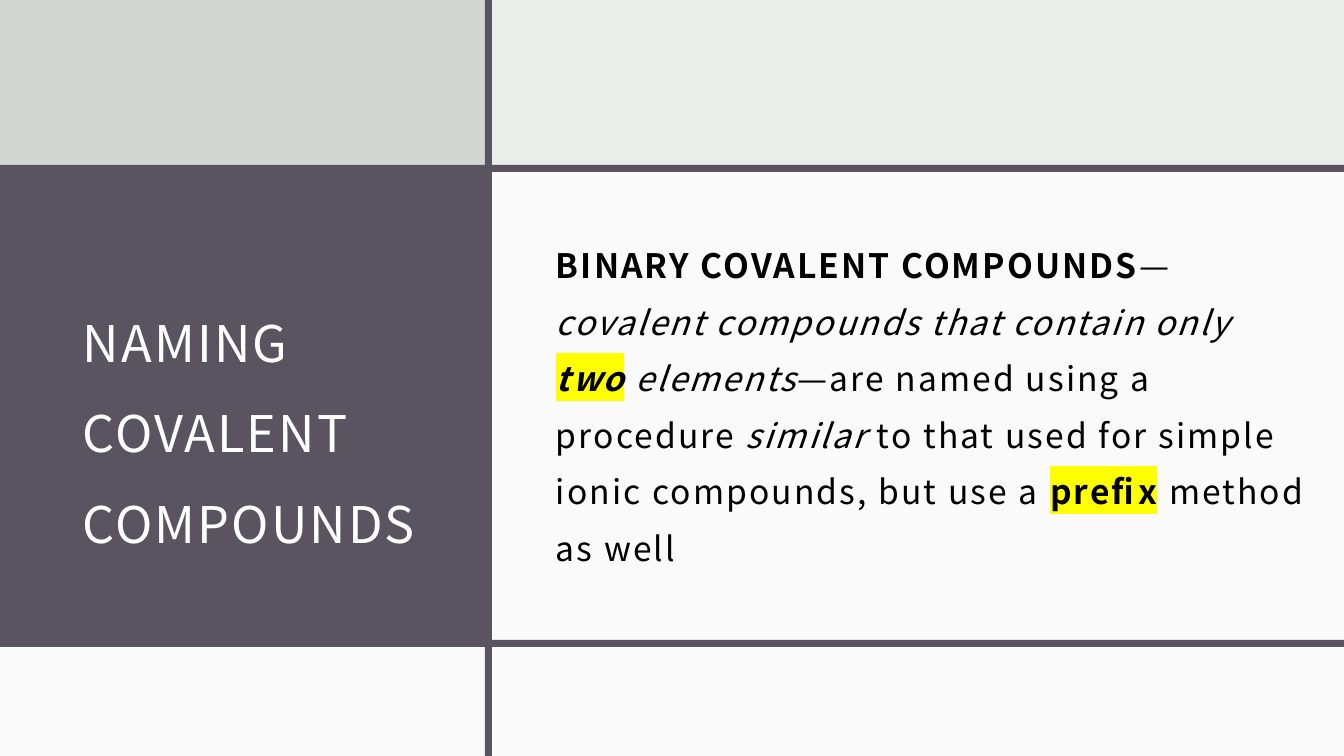
from lxml import etree
from pptx import Presentation
from pptx import util as u
from pptx.dml.color import RGBColor
from pptx.enum import shapes, text
from pptx.oxml import ns

FONT = "Noto Sans CJK JP"
PLUM = "595460"
WHITE = "FFFFFF"
YELLOW = "FFFF00"
RULE = 7
WIDTH, HEIGHT = 1344, 756

BODY = [
    ("BINARY COVALENT COMPOUNDS", "b"),
    ("—", ""),
    ("covalent compounds that contain only ", "i"),
    ("two", "bih"),
    (" elements", "i"),
    ("—are named using a procedure ", ""),
    ("similar", "i"),
    (" to that used for simple ionic compounds, but use a ", ""),
    ("prefix", "bh"),
    (" method as well", ""),
]


def px(length):
    return u.Emu(round(length * 914400 / 100.8))


def color(hex_code):
    return RGBColor.from_string(hex_code)


def add_panel(page, left, top, width, height, fill, opacity=100):
    """Add a borderless rectangle; opacity is a percentage."""
    panel = page.shapes.add_shape(
        shapes.MSO_SHAPE.RECTANGLE, px(left), px(top), px(width), px(height))
    panel.shadow.inherit = False
    panel.line.fill.background()
    panel.fill.solid()
    panel.fill.fore_color.rgb = color(fill)
    if opacity < 100:
        tint = panel.fill._xPr.find(".//" + ns.qn("a:srgbClr"))
        etree.SubElement(tint, ns.qn("a:alpha"), val=str(opacity * 1000))


def highlight(span, fill):
    """Mark a formatted run; the mark must precede its font element."""
    mark = etree.Element(ns.qn("a:highlight"))
    etree.SubElement(mark, ns.qn("a:srgbClr"), val=fill)
    span._r.get_or_add_rPr().find(ns.qn("a:latin")).addprevious(mark)


def add_text(page, left, top, width, height, spans, size, fill, spacing):
    """Add one paragraph; span styles are b (bold), i (italic), h (highlight)."""
    box = page.shapes.add_textbox(px(left), px(top), px(width), px(height))
    frame = box.text_frame
    frame.word_wrap = True
    frame.vertical_anchor = text.MSO_ANCHOR.MIDDLE
    frame.margin_left = frame.margin_top = frame.margin_right = px(12)
    frame.margin_bottom = px(10)
    para = frame.paragraphs[0]
    para.line_spacing = spacing
    for words, style in spans:
        span = para.add_run()
        span.text = words
        span.font.name = FONT
        span.font.size = u.Pt(size)
        span.font.bold = "b" in style
        span.font.italic = "i" in style
        span.font.color.rgb = color(fill)
        span._r.get_or_add_rPr().set("spc", "150")
        if "h" in style:
            highlight(span, YELLOW)
    return para


def main():
    deck = Presentation()
    deck.slide_width, deck.slide_height = px(WIDTH), px(HEIGHT)
    page = deck.slides.add_slide(deck.slide_layouts[6])
    page.background.fill.solid()
    page.background.fill.fore_color.rgb = color("EBEDEB")

    add_panel(page, 0, 165, 488, 482, PLUM)
    add_text(page, 71, 216, 376, 401, [("NAMING COVALENT COMPOUNDS", "")],
             36, WHITE, 1.5)
    add_panel(page, 0, 0, 488, 167, "D2D7D2")
    add_panel(page, 488, 167, WIDTH - 488, 480, WHITE, 75)
    add_panel(page, 0, 165, WIDTH, RULE, PLUM)
    add_panel(page, 0, 646, WIDTH, HEIGHT - 646, WHITE, 75)
    add_panel(page, 0, 640, WIDTH, RULE, PLUM)
    add_panel(page, 485, 0, RULE, HEIGHT, PLUM)
    body = add_text(page, 544, 197, 776, 401, BODY, 24, "000000", 1.4)
    body.space_before = u.Pt(9.3)

    deck.save("out.pptx")


if __name__ == "__main__":
    main()
